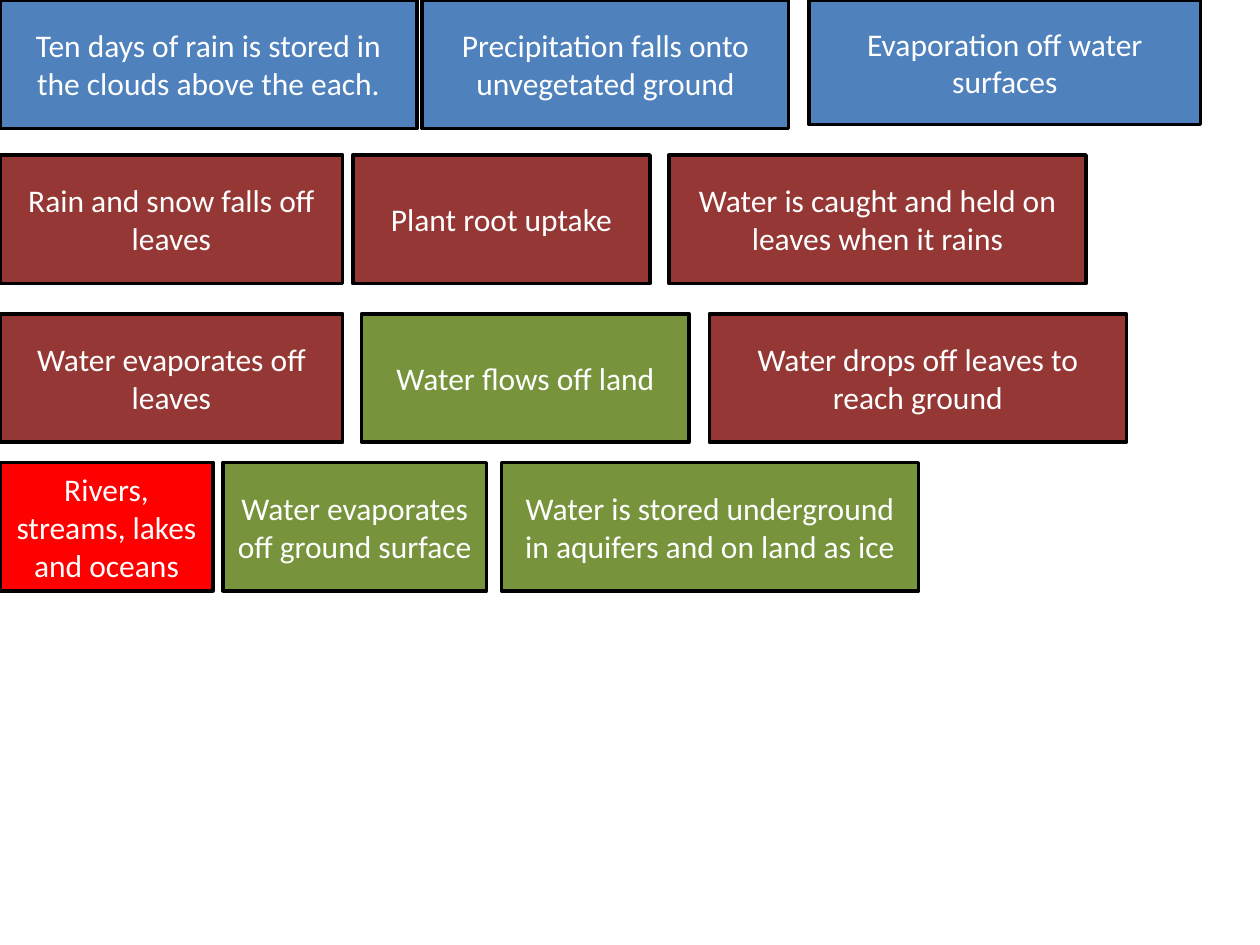
import pptx
import pptx.dml.color
import pptx.enum.shapes
import pptx.enum.text
import pptx.util

BLUE, MAROON, GREEN, RED = "4F81BD", "953735", "77933C", "FF0000"
BLACK, WHITE = "000000", "FFFFFF"
HIGH = 1.02
WIDE = 3.31

# Each row: top, then cards as (left, width, fill, text)
ROWS = [
    (0, [
        (0, WIDE, BLUE, "Ten days of rain is stored in the clouds above the each."),
        (3.35, 2.91, BLUE, "Precipitation falls onto unvegetated ground"),
        (6.42, 3.11, BLUE, "Evaporation off water surfaces"),
    ]),
    (1.23, [
        (0, 2.72, MAROON, "Rain and snow falls off leaves"),
        (2.8, 2.36, MAROON, "Plant root uptake"),
        (5.31, WIDE, MAROON, "Water is caught and held on leaves when it rains"),
    ]),
    (2.49, [
        (0, 2.72, MAROON, "Water evaporates off leaves"),
        (2.87, 2.6, GREEN, "Water flows off land"),
        (5.63, WIDE, MAROON, "Water drops off leaves to reach ground"),
    ]),
    (3.67, [
        (0, 1.69, RED, "Rivers, streams, lakes and oceans"),
        (1.77, 2.09, GREEN, "Water evaporates off ground surface"),
        (3.98, WIDE, GREEN, "Water is stored underground in aquifers and on land as ice"),
    ]),
]


def color(code):
    return pptx.dml.color.RGBColor.from_string(code)


def add_card(slide, left, top, width, height, fill, text):
    box = [pptx.util.Inches(n) for n in (left, top, width, height)]
    card = slide.shapes.add_shape(pptx.enum.shapes.MSO_SHAPE.RECTANGLE, *box)
    card.shadow.inherit = False
    card.fill.solid()
    card.fill.fore_color.rgb = color(fill)
    card.line.color.rgb = color(BLACK)
    card.line.width = pptx.util.Pt(2)

    frame = card.text_frame
    frame.text = text
    frame.word_wrap = True
    frame.vertical_anchor = pptx.enum.text.MSO_ANCHOR.MIDDLE
    para = frame.paragraphs[0]
    para.alignment = pptx.enum.text.PP_ALIGN.CENTER
    font = para.runs[0].font
    font.name = "Calibri"
    font.size = pptx.util.Pt(18)
    font.color.rgb = color(WHITE)
    return card


def add_row(slide, top, cards):
    return [add_card(slide, left, top, width, HIGH, fill, text)
            for left, width, fill, text in cards]


def main():
    deck = pptx.Presentation()
    deck.slide_width = pptx.util.Inches(10)
    deck.slide_height = pptx.util.Inches(7.5)
    slide = deck.slides.add_slide(deck.slide_layouts.get_by_name("Blank"))
    rows = [add_row(slide, top, cards) for top, cards in ROWS]
    # The evaporation card is slightly shorter than the rest
    rows[0][-1].height = pptx.util.Inches(0.99)
    deck.save("out.pptx")


if __name__ == "__main__":
    main()
